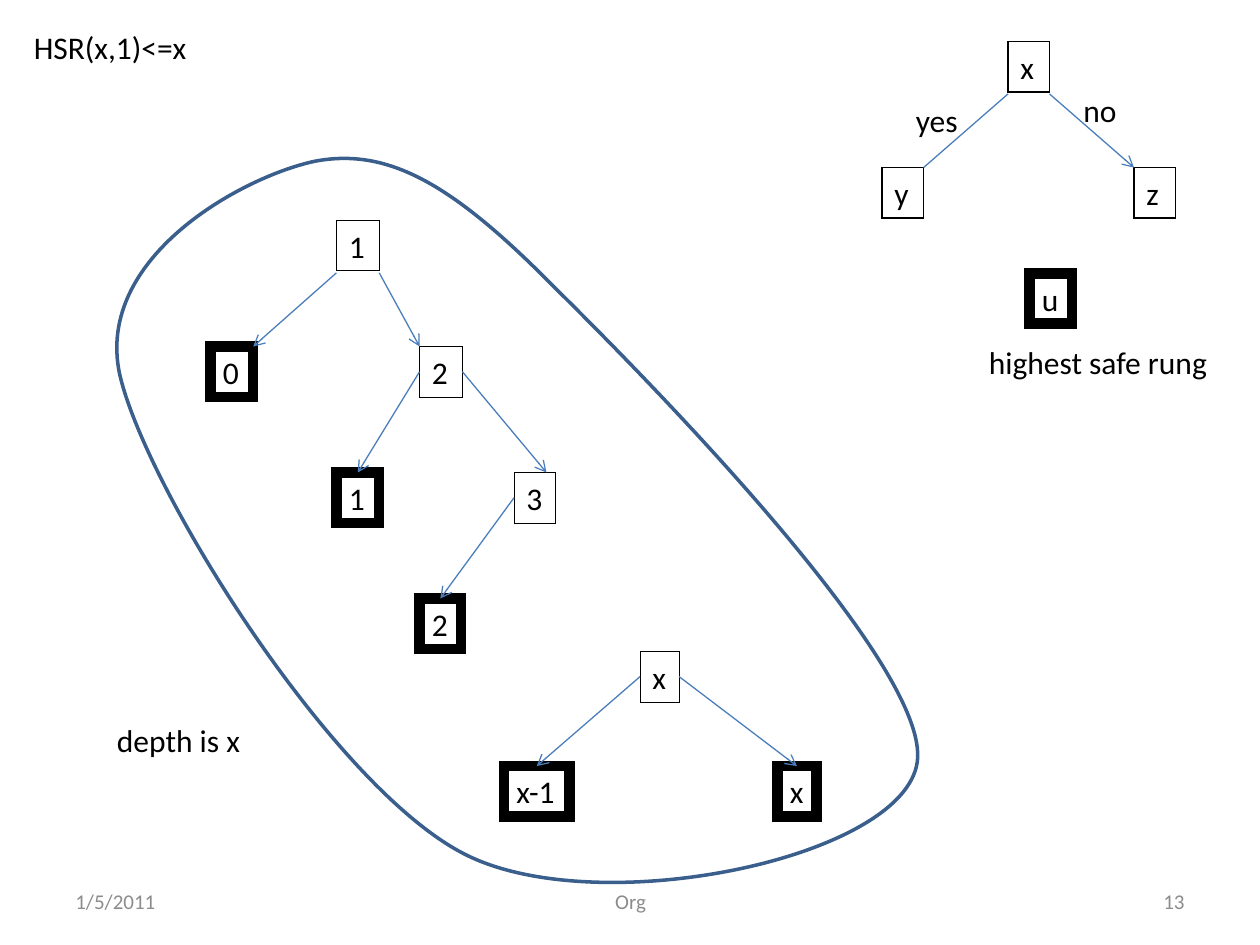
from lxml import etree
from pptx import Presentation
from pptx.dml.color import RGBColor
from pptx.enum import shapes, text
from pptx.oxml.ns import qn
from pptx.util import Inches, Pt

BLACK = RGBColor(0x00, 0x00, 0x00)
GRAY = RGBColor(0x8C, 0x8C, 0x8C)
ARROW_BLUE = RGBColor(0x4B, 0x7E, 0xBC)
OUTLINE_BLUE = RGBColor(0x3A, 0x5F, 0x8C)
FONT = "Calibri"
ROW = 0.4
LEAF, THIN, HAIR = 6, 0.75, 0.25  # node border widths

# Anchor points as fractions of a node's width and height
TOP, LEFT, BOTTOM, RIGHT = (0.5, 0), (0, 0.5), (0.5, 1), (1, 0.5)
TOP_LEFT, TOP_RIGHT, BOTTOM_LEFT, BOTTOM_RIGHT = (0, 0), (1, 0), (0, 1.04), (1, 1.04)
SITES = {TOP: 0, LEFT: 1, BOTTOM: 2, RIGHT: 3}


def add_words(shape, words, size=18, color=BLACK, align=text.PP_ALIGN.LEFT):
    paragraph = shape.text_frame.paragraphs[0]
    paragraph.alignment = align
    run = paragraph.add_run()
    run.text = words
    run.font.name = FONT
    run.font.size = Pt(size)
    run.font.color.rgb = color


def add_label(slide, words, left, top, width):
    label = slide.shapes.add_textbox(Inches(left), Inches(top), Inches(width), Inches(ROW))
    label.text_frame.word_wrap = False
    label.text_frame.auto_size = text.MSO_AUTO_SIZE.SHAPE_TO_FIT_TEXT
    add_words(label, words)
    return label


def add_node(slide, words, left, top, border, width=0.34):
    node = add_label(slide, words, left, top, width)
    node.line.color.rgb = BLACK
    node.line.width = Pt(border)
    etree.SubElement(node.line._get_or_add_ln(), qn("a:miter"), lim="800000")
    return node


def anchor_point(node, anchor):
    return (int(node.left + node.width * anchor[0]),
            int(node.top + node.height * anchor[1]))


def add_edge(slide, parent, start, child, end, arrow=True):
    edge = slide.shapes.add_connector(
        shapes.MSO_CONNECTOR.STRAIGHT,
        *anchor_point(parent, start), *anchor_point(child, end))
    if start in SITES:
        edge.begin_connect(parent, SITES[start])
    if end in SITES:
        edge.end_connect(child, SITES[end])
    edge.line.color.rgb = ARROW_BLUE
    edge.line.width = Pt(0.75)
    if arrow:
        etree.SubElement(edge.line._get_or_add_ln(), qn("a:tailEnd"), type="arrow")
    etree.SubElement(edge._element.spPr, qn("a:effectLst"))


def add_legend(slide, left, top):
    """Key to the tree: question node, its two answers and a result leaf."""
    question = add_node(slide, "x", left + 1, top, THIN, 0.33)
    yes_node = add_node(slide, "y", left, top + 1, THIN, 0.33)
    no_node = add_node(slide, "z", left + 2, top + 1, THIN, 0.33)
    add_edge(slide, question, BOTTOM_LEFT, yes_node, TOP_RIGHT, arrow=False)
    add_edge(slide, question, BOTTOM_RIGHT, no_node, TOP_LEFT)
    add_label(slide, "yes", left + 0.17, top + 0.42, 0.59)
    add_label(slide, "no", left + 1.5, top + 0.34, 0.48)
    add_node(slide, "u", left + 1.17, top + 1.84, LEAF)
    add_label(slide, "highest safe rung", left + 0.75, top + 2.34, 2.14)


def add_decision_tree(slide, left, top):
    """Chain of questions; each row of the upper part is one inch lower."""
    def node(words, x, y, border, width=0.34):
        return add_node(slide, words, left + x, top + y, border, width)

    # Upper part
    ask_1 = node("1", 1, 0, THIN)
    safe_0 = node("0", 0, 1, LEAF)
    ask_2 = node("2", 1.66, 1, HAIR)
    safe_1 = node("1", 1, 2, LEAF)
    ask_3 = node("3", 2.41, 2, HAIR, 0.33)
    ask_3.text_frame.word_wrap = True
    safe_2 = node("2", 1.66, 3, LEAF, 0.33)

    # Last question
    ask_x = node("x", 3.41, 3.42, HAIR, 0.31)
    safe_before_x = node("x-1", 2.33, 4.33, LEAF, 0.52)
    safe_x = node("x", 4.5, 4.33, LEAF, 0.31)

    for parent, start, child, end in [
        (ask_1, BOTTOM_LEFT, safe_0, TOP_RIGHT),
        (ask_1, BOTTOM_RIGHT, ask_2, TOP_LEFT),
        (ask_2, LEFT, safe_1, TOP),
        (ask_2, RIGHT, ask_3, (0.78, 0)),
        (ask_3, LEFT, safe_2, TOP),
        (ask_x, LEFT, safe_before_x, TOP),
        (ask_x, RIGHT, safe_x, TOP),
    ]:
        add_edge(slide, parent, start, child, end)


def add_tree_outline(slide, left, top):
    """Closed smooth loop of cubic curves around the decision tree."""
    start = (1.75, 0.11)
    curve_points = [
        (2.33, 0), (2.84, 0.29), (3.63, 1.09),
        (4.43, 1.88), (6.64, 4.13), (6.53, 4.88),
        (6.42, 5.64), (4.02, 6.14), (2.96, 5.62),
        (1.91, 5.11), (0.41, 2.72), (0.2, 1.8),
        (0, 0.87), (1.18, 0.23), start,
    ]
    points = [(Inches(left + x), Inches(top + y)) for x, y in [start, *curve_points]]
    builder = slide.shapes.build_freeform(*points[0], scale=1.0)
    builder.add_line_segments(points[1:], close=True)
    loop = builder.convert_to_shape()

    # Every three points become one cubic curve
    segments = list(loop._element.iter(qn("a:lnTo")))
    for i in range(0, len(curve_points), 3):
        curve = etree.Element(qn("a:cubicBezTo"))
        segments[i].addprevious(curve)
        for segment in segments[i:i + 3]:
            curve.append(segment[0])
            segment.getparent().remove(segment)

    loop.shadow.inherit = False
    loop.fill.background()
    loop.line.color.rgb = OUTLINE_BLUE
    loop.line.width = Pt(2)


def add_footer(slide, top):
    for words, left, width, align in [
        ("1/5/2011", 0.5, 2.33, text.PP_ALIGN.LEFT),
        ("Org", 3.42, 3.17, text.PP_ALIGN.CENTER),
        ("13", 7.17, 2.33, text.PP_ALIGN.RIGHT),
    ]:
        part = slide.shapes.add_textbox(Inches(left), Inches(top), Inches(width), Inches(ROW))
        part.text_frame.word_wrap = True
        part.text_frame.vertical_anchor = text.MSO_ANCHOR.MIDDLE
        add_words(part, words, 12, GRAY, align)


def main():
    deck = Presentation()
    deck.slide_width, deck.slide_height = Inches(10), Inches(7.5)
    slide = deck.slides.add_slide(deck.slide_layouts[6])
    add_label(slide, "HSR(x,1)<=x", 0.17, 0.17, 1.43)
    add_legend(slide, 7, 0.33)
    add_decision_tree(slide, 1.67, 1.75)
    add_tree_outline(slide, 0.75, 1.17)
    add_label(slide, "depth is x", 0.83, 5.67, 1.19)
    add_footer(slide, 6.95)
    deck.save("out.pptx")


if __name__ == "__main__":
    main()
